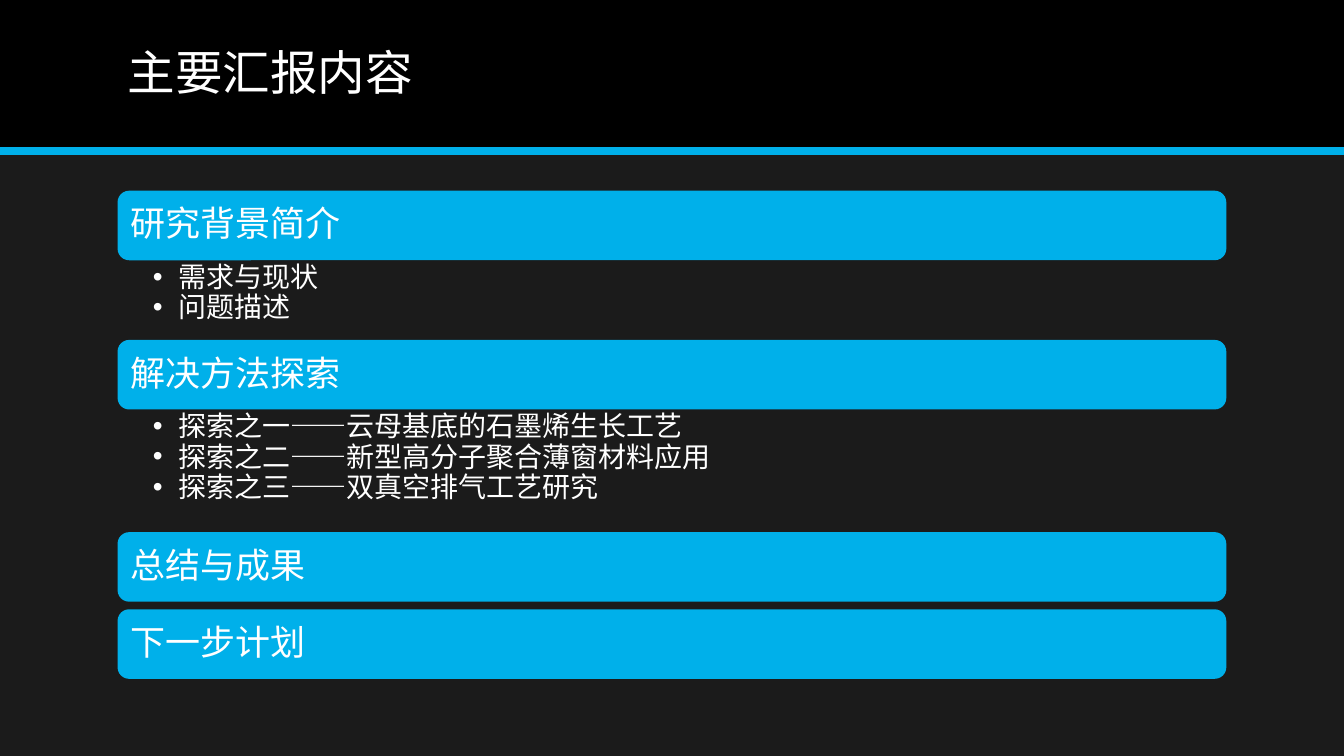
from lxml.etree import SubElement
from pptx import Presentation
from pptx.dml.color import RGBColor
from pptx.enum.shapes import MSO_CONNECTOR, MSO_SHAPE
from pptx.enum.text import MSO_ANCHOR, MSO_AUTO_SIZE, PP_ALIGN
from pptx.oxml.ns import qn
from pptx.util import Pt

BLACK, DARK, BLUE, WHITE = "000000", "1B1B1B", "00B0EA", "FFFFFF"
CJK_FONT = "Noto Sans CJK SC"
LEFT, WIDTH = 84, 792
FIRST_TOP, BAR_HEIGHT, GAP = 136.2, 49.7, 5.4
SECTIONS = [  # heading, height of its list, list items
    ("研究背景简介", 56.9, ["需求与现状", "问题描述"]),
    ("解决方法探索", 87.6, ["探索之一——云母基底的石墨烯生长工艺",
                     "探索之二——新型高分子聚合薄窗材料应用",
                     "探索之三——双真空排气工艺研究"]),
    ("总结与成果", GAP, []),
    ("下一步计划", GAP, []),
]


def paint(target, color):
    target.solid()
    target.fore_color.rgb = RGBColor.from_string(color)


def apply_format(target, values):
    for name, value in values.items():
        setattr(target, name, value)


def write(shape, lines, size, font, margins, anchor, bulleted=False):
    left, top, right, bottom = map(Pt, margins)
    frame = shape.text_frame
    apply_format(frame, {
        "text": "\n".join(lines), "word_wrap": True,
        "auto_size": MSO_AUTO_SIZE.NONE, "vertical_anchor": anchor,
        "margin_left": left, "margin_top": top,
        "margin_right": right, "margin_bottom": bottom})
    for para in frame.paragraphs:
        apply_format(para, {"alignment": PP_ALIGN.LEFT, "line_spacing": 0.9,
                            "space_before": Pt(0), "space_after": Pt(0)})
        if bulleted:
            add_bullet(para)
        for span in para.runs:
            apply_format(span.font, {"size": Pt(size), "name": font})
            paint(span.font.fill, WHITE)
            properties = span.font._element
            properties.set("lang", "zh-CN")
            SubElement(properties, qn("a:ea"), typeface=CJK_FONT)


def add_bullet(para):
    properties = para._p.get_or_add_pPr()
    properties.set("marL", str(Pt(18)))
    properties.set("indent", str(Pt(-18)))
    SubElement(properties, qn("a:buFont"), typeface="Arial")
    SubElement(properties, qn("a:buChar"), char="•")


def add_block(page, kind, left, top, width, height, color):
    block = page.shapes.add_shape(kind, Pt(left), Pt(top), Pt(width), Pt(height))
    block.shadow.inherit = False
    paint(block.fill, color)
    block.line.fill.background()
    return block


def add_rule(page, top, width, color, weight):
    rule = page.shapes.add_connector(
        MSO_CONNECTOR.STRAIGHT, 0, Pt(top), Pt(width), Pt(top))
    paint(rule.line.fill, color)
    rule.line.width = Pt(weight)
    SubElement(rule.element.spPr, qn("a:effectLst"))


def add_title(page, words):
    title = page.shapes.title
    apply_format(title, {"left": Pt(LEFT), "top": Pt(10.1),
                         "width": Pt(WIDTH), "height": Pt(86.4)})
    write(title, [words], 34, CJK_FONT, (7.2, 3.6, 7.2, 3.6), MSO_ANCHOR.MIDDLE)
    # Bring the title in front of the header band
    title.element.getparent().append(title.element)


def add_section(page, top, heading, list_height, items):
    bar = add_block(page, MSO_SHAPE.ROUNDED_RECTANGLE,
                    LEFT, top, WIDTH, BAR_HEIGHT, BLUE)
    write(bar, [heading], 25, "Arial", (7.2,) * 4, MSO_ANCHOR.MIDDLE)
    if items:
        box = page.shapes.add_textbox(
            Pt(LEFT), Pt(top + BAR_HEIGHT), Pt(WIDTH), Pt(list_height))
        write(box, items, 20, "Arial", (25.2, 2.2, 13.7, 2.2),
              MSO_ANCHOR.TOP, bulleted=True)


def main():
    deck = Presentation()
    apply_format(deck, {"slide_width": Pt(960), "slide_height": Pt(540)})
    page = deck.slides.add_slide(deck.slide_layouts.get_by_name("Title Only"))
    paint(page.background.fill, DARK)

    # Header
    add_block(page, MSO_SHAPE.RECTANGLE, 0, 0, 960, 108, BLACK)
    add_rule(page, 108, 960, BLUE, 6)
    add_title(page, "主要汇报内容")

    # Agenda, stacked from the top
    top = FIRST_TOP
    for heading, list_height, items in SECTIONS:
        add_section(page, top, heading, list_height, items)
        top += BAR_HEIGHT + list_height

    deck.save("out.pptx")


if __name__ == "__main__":
    main()
